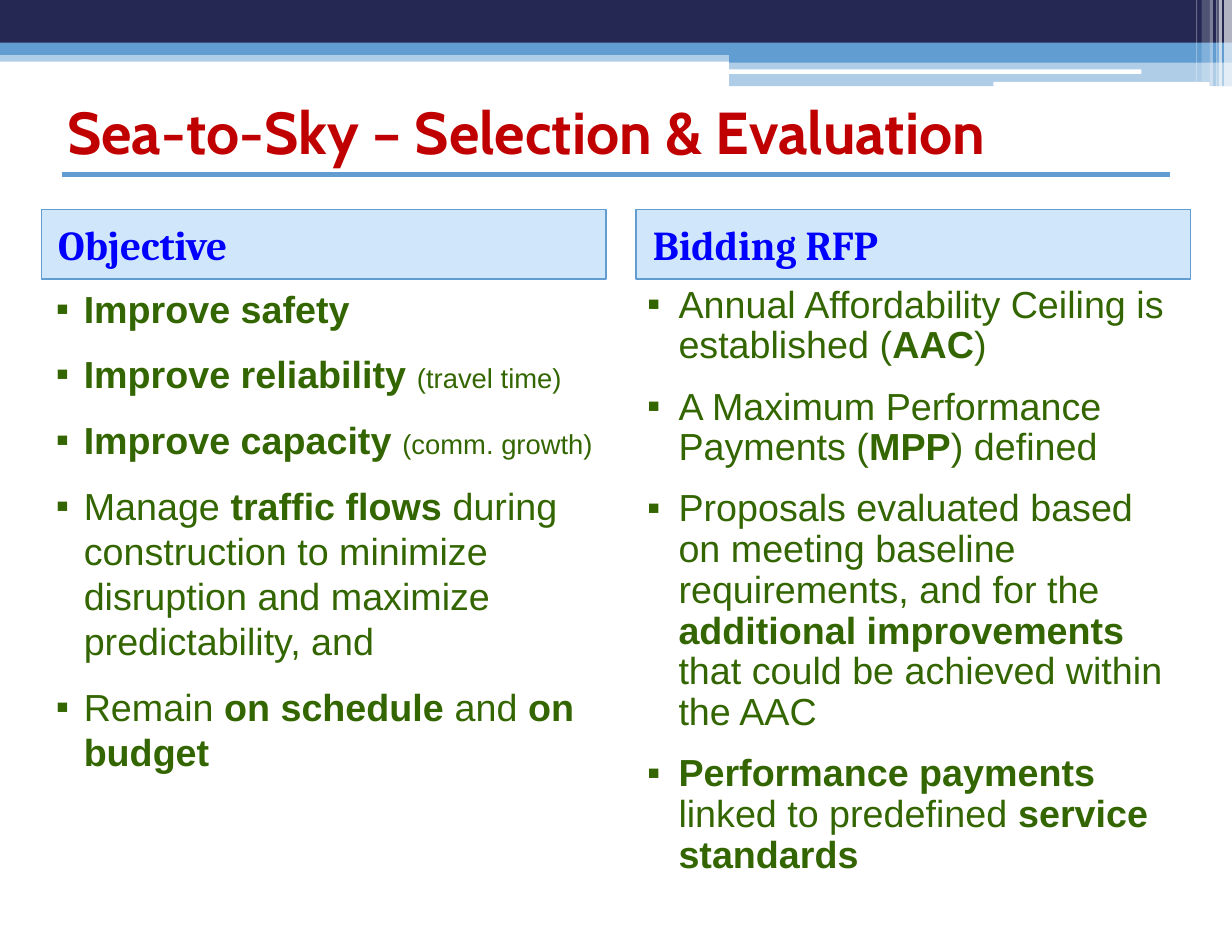
from dataclasses import dataclass
from typing import NamedTuple, Optional

from lxml import etree
from pptx import Presentation
from pptx.dml.color import RGBColor
from pptx.enum.shapes import MSO_CONNECTOR, MSO_SHAPE
from pptx.enum.text import MSO_ANCHOR, MSO_AUTO_SIZE, PP_ALIGN
from pptx.oxml.ns import qn
from pptx.util import Inches, Pt

RECT, ROUNDED = MSO_SHAPE.RECTANGLE, MSO_SHAPE.ROUNDED_RECTANGLE
STRAIGHT = MSO_CONNECTOR.STRAIGHT
LEFT, TOP, MIDDLE = PP_ALIGN.LEFT, MSO_ANCHOR.TOP, MSO_ANCHOR.MIDDLE
NO_FIT = MSO_AUTO_SIZE.NONE

COLORS = {
    "navy": "242852", "blue": "629DD1", "white": "FFFFFF", "sky": "469FED",
    "title": "C00000", "heading": "0000FF", "body": "336600",
}
WIDTH, HEIGHT = Inches(11), Inches(8.5)
COLUMNS, ROWS = 1100, 850


class Area(NamedTuple):
    column: float
    row: float
    columns: float
    rows: float


@dataclass(frozen=True)
class Band:
    area: Area
    color: str
    opacity: int = 100
    rounded: bool = False


class Style(NamedTuple):
    font: str
    size: float
    color: str
    bold: bool = False


class Span(NamedTuple):
    text: str
    style: Style


@dataclass(frozen=True)
class Topic:
    heading: str
    column: int
    columns: int
    hanging: float
    line_spacing: Optional[float]
    points: list[list[Span]]


TITLE = Style("Cabin", 38, "title", True)
HEADING = Style("Cambria", 26.4, "heading", True)
PLAIN = Style("Arial", 24.2, "body")
STRONG = PLAIN._replace(bold=True)
SMALL = PLAIN._replace(size=17.6)

BANDS = [
    Band(Area(0, 45, 1100, 10), "blue", 50),
    Band(Area(0, 0, 1100, 39), "navy"),
    Band(Area(0, 38, 1100, 11), "blue"),
    Band(Area(651, 45, 449, 11), "blue"),
    Band(Area(651, 55, 449, 22), "blue", 50),
    Band(Area(650, 62, 369, 4), "white", rounded=True),
    Band(Area(887, 73, 193, 5), "white", rounded=True),
    Band(Area(1093, 0, 7, 77), "white", 65),
    Band(Area(1088, 0, 3, 77), "white", 65),
    Band(Area(1086, 0, 1, 77), "white", 60),
    Band(Area(1080, 0, 3, 77), "white", 40),
    Band(Area(1073, 0, 7, 73), "white", 20),
    Band(Area(1068, 0, 1, 73), "white", 30),
]

TOPICS = [
    Topic("Bidding RFP", 568, 495, 0.28, 0.9, [
        [Span("Annual Affordability Ceiling is established (", PLAIN),
         Span("AAC", STRONG), Span(")", PLAIN)],
        [Span("A Maximum Performance Payments (", PLAIN),
         Span("MPP", STRONG), Span(") defined", PLAIN)],
        [Span("Proposals evaluated based on meeting baseline requirements, "
              "and for the ", PLAIN),
         Span("additional improvements ", STRONG),
         Span("that could be achieved within the AAC", PLAIN)],
        [Span("Performance payments ", STRONG),
         Span("linked to predefined ", PLAIN),
         Span("service standards", STRONG)],
    ]),
    Topic("Objective", 37, 504, 0.25, None, [
        [Span("Improve safety", STRONG)],
        [Span("Improve reliability ", STRONG), Span("(travel time)", SMALL)],
        [Span("Improve capacity ", STRONG), Span("(comm. growth)", SMALL)],
        [Span("Manage ", PLAIN), Span("traffic flows ", STRONG),
         Span("during construction to minimize disruption and maximize "
              "predictability, and", PLAIN)],
        [Span("Remain ", PLAIN), Span("on schedule ", STRONG),
         Span("and ", PLAIN), Span("on budget", STRONG)],
    ]),
]


def x(columns: float) -> int:
    return round(WIDTH * columns / COLUMNS)


def y(rows: float) -> int:
    return round(HEIGHT * rows / ROWS)


def place(area: Area) -> tuple[int, int, int, int]:
    return x(area.column), y(area.row), x(area.columns), y(area.rows)


def rgb(name: str) -> RGBColor:
    return RGBColor.from_string(COLORS[name])


def apply(target, values: dict) -> None:
    for name, value in values.items():
        setattr(target, name, value)


def draw_band(slide, band: Band):
    block = slide.shapes.add_shape(ROUNDED if band.rounded else RECT, *place(band.area))
    block.shadow.inherit = False
    block.fill.solid()
    block.fill.fore_color.rgb = rgb(band.color)
    block.line.fill.background()
    if band.opacity < 100:
        tint = block.fill._xPr.find(qn("a:solidFill"))[0]
        etree.SubElement(tint, qn("a:alpha"), val=str(band.opacity * 1000))
    return block


def draw_rule(slide) -> None:
    rule = slide.shapes.add_connector(STRAIGHT, x(55), y(156), x(1045), y(156))
    rule.line.color.rgb = rgb("blue")
    rule.line.width = Pt(3)
    etree.SubElement(rule._element.spPr, qn("a:effectLst"))


def write(paragraph, spans: list[Span]) -> None:
    paragraph.alignment = LEFT
    for span in spans:
        run = paragraph.add_run()
        run.text = span.text
        apply(run.font, {"name": span.style.font, "size": Pt(span.style.size),
                         "bold": span.style.bold})
        run.font.color.rgb = rgb(span.style.color)


def indent(paragraph, margin: float, hanging: float = 0) -> None:
    properties = paragraph._p.get_or_add_pPr()
    properties.set("marL", str(Inches(margin)))
    properties.set("indent", str(-Inches(hanging)))


def add_bullet(paragraph) -> None:
    properties = paragraph._p.get_or_add_pPr()
    tint = etree.SubElement(properties, qn("a:buClr"))
    etree.SubElement(tint, qn("a:srgbClr"), val=COLORS["body"])
    etree.SubElement(properties, qn("a:buFont"), typeface="Arial")
    etree.SubElement(properties, qn("a:buChar"), char="▪")


def draw_heading(slide, topic: Topic) -> None:
    header = draw_band(slide, Band(Area(topic.column, 187, topic.columns, 62), "sky", 25))
    header.line.color.rgb = rgb("blue")
    header.line.width = Pt(1)
    apply(header.text_frame, {"word_wrap": True, "vertical_anchor": MIDDLE})
    paragraph = header.text_frame.paragraphs[0]
    paragraph.space_before = Pt(3)
    indent(paragraph, 0.05)
    write(paragraph, [Span(topic.heading, HEADING)])


def draw_points(slide, topic: Topic) -> None:
    area = Area(topic.column, 250, topic.columns, 531)
    frame = slide.shapes.add_textbox(*place(area)).text_frame
    apply(frame, {"word_wrap": True, "auto_size": NO_FIT, "vertical_anchor": TOP})
    for number, spans in enumerate(topic.points):
        paragraph = frame.add_paragraph() if number else frame.paragraphs[0]
        apply(paragraph, {"line_spacing": topic.line_spacing,
                          "space_before": Pt(6.6), "space_after": Pt(6.6)})
        indent(paragraph, 0.28, topic.hanging)
        add_bullet(paragraph)
        write(paragraph, spans)


def main() -> None:
    deck = Presentation()
    apply(deck, {"slide_width": WIDTH, "slide_height": HEIGHT})
    slide = deck.slides.add_slide(deck.slide_layouts[5])
    for band in BANDS:
        draw_band(slide, band)
    draw_rule(slide)
    title = slide.shapes.title
    apply(title, dict(zip(("left", "top", "width", "height"),
                          place(Area(50, 50, 1008, 133)))))
    apply(title.text_frame, {"word_wrap": True, "auto_size": NO_FIT,
                             "vertical_anchor": MIDDLE})
    write(title.text_frame.paragraphs[0],
          [Span("Sea-to-Sky – Selection & Evaluation", TITLE)])
    for draw in (draw_heading, draw_points):
        for topic in TOPICS:
            draw(slide, topic)
    deck.save("out.pptx")


if __name__ == "__main__":
    main()
